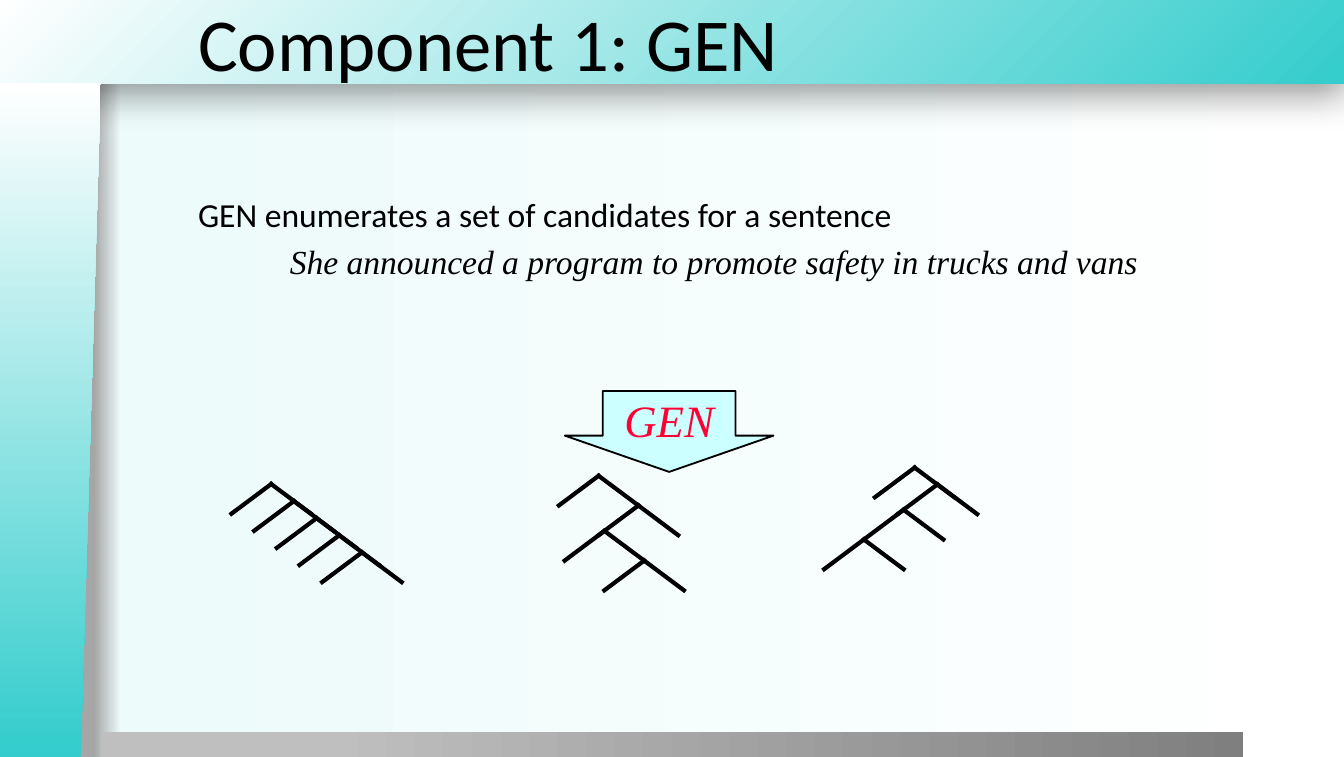
from pptx import Presentation
from pptx import util as u
from pptx.dml.color import RGBColor
from pptx.enum import shapes, text
from pptx.oxml import parse_xml
from pptx.oxml.ns import nsdecls, qn

Pt = u.Pt
color = RGBColor.from_string


def set_gradient(parent, stops, direction='<a:lin ang="0" scaled="0"/>'):
    stop_xml = "".join(
        f'<a:gs pos="{position * 1000}"><a:srgbClr val="{value}"/></a:gs>'
        for position, value in stops
    )
    gradient = parse_xml(
        f'<a:gradFill {nsdecls("a")} rotWithShape="1"><a:gsLst>{stop_xml}</a:gsLst>{direction}</a:gradFill>'
    )
    parent.replace(parent.find(qn("a:solidFill")), gradient)


def add_run(paragraph, wording, size, font, value, italic=False):
    run = paragraph.add_run()
    run.text = wording
    run.font.size = Pt(size)
    run.font.name = font
    run.font.italic = italic
    run.font.color.rgb = color(value)


presentation = Presentation()
presentation.slide_width = Pt(720)
presentation.slide_height = Pt(405.36)
slide = presentation.slides.add_slide(presentation.slide_layouts[6])

slide.background.fill.solid()
set_gradient(
    slide.element.find(".//" + qn("p:bgPr")),
    [(7, "A6A6A6"), (9, "EDFBFB"), (100, "FFFFFF")],
)

linear = '<a:lin ang="0" scaled="0"/>'
corner = '<a:path path="circle"><a:fillToRect l="100000" t="100000"/></a:path>'
panels = []
for preset, left, top, width, height, stops, direction in [
    (shapes.MSO_SHAPE.RECTANGLE, -0.5, 0, 720.5, 44.7, [(0, "34CCCC"), (100, "FFFFFF")], corner),
    (shapes.MSO_SHAPE.RECTANGLE, 54, 392, 612, 14, [(20, "BFBFBF"), (100, "7F7F7F")], linear),
    (shapes.MSO_SHAPE.FLOWCHART_MANUAL_INPUT, -153.7, 198.2, 361.4, 54,
     [(1, "34CCCC"), (100, "FFFFFF")], linear),
]:
    panel = slide.shapes.add_shape(preset, Pt(left), Pt(top), Pt(width), Pt(height))
    panel.shadow.inherit = False
    panel.line.fill.background()
    panel.fill.solid()
    set_gradient(panel.element.spPr, stops, direction)
    panels.append(panel)

header, footer, sidebar = panels
sidebar.rotation = 270
sidebar.element.spPr.find(qn("a:xfrm")).set("flipV", "1")
header.element.spPr.find(qn("a:effectLst")).append(parse_xml(
    f'<a:outerShdw {nsdecls("a")} blurRad="{Pt(20)}" dist="{Pt(6)}" dir="5400000" rotWithShape="0">'
    '<a:srgbClr val="000000"><a:alpha val="40000"/></a:srgbClr></a:outerShdw>'
))

title = slide.shapes.add_textbox(Pt(99), Pt(0), Pt(621), Pt(44.7))
title.text_frame.word_wrap = True
title.text_frame.vertical_anchor = text.MSO_ANCHOR.MIDDLE
add_run(title.text_frame.paragraphs[0], "Component 1: GEN", 40, "Calibri", "000000")

body = slide.shapes.add_textbox(Pt(99), Pt(100.4), Pt(567), Pt(136))
body.text_frame.word_wrap = True
statement = body.text_frame.paragraphs[0]
example = body.text_frame.add_paragraph()
example.alignment = text.PP_ALIGN.CENTER
for paragraph in (statement, example):
    paragraph.space_before = Pt(3.6)
    properties = paragraph._p.get_or_add_pPr()
    properties.set("marL", str(Pt(21)))
    properties.set("indent", str(Pt(-21)))
add_run(statement, "GEN enumerates a set of candidates for a sentence", 18, "Calibri", "000000")
add_run(example, "She announced a program to promote safety in trucks and vans", 18,
        "Times New Roman", "000000", True)

branch_width, branch_height = 21.3, 15.9
trees = [
    [(145.3 + 12.15 * level, 259.2 + 9.15 * level) for level in range(5)],
    [(320.7, 254.8), (342, 270.7), (323.8, 284.3), (345.1, 300.2)],
    [(490, 250.4), (502.2, 259.4), (484.1, 273), (462.8, 288.9)],
]
for nodes in trees:
    tree = slide.shapes.add_group_shape()
    for x, y in nodes:
        for side in (-1, 1):
            branch = tree.shapes.add_connector(
                shapes.MSO_CONNECTOR.STRAIGHT,
                Pt(x + side * branch_width), Pt(y + branch_height), Pt(x), Pt(y),
            )
            branch.line.color.rgb = color("000000")
            branch.line.width = Pt(2.25)
            branch.element.spPr.find(qn("a:ln")).set("cap", "sq")
            branch.element.spPr.append(parse_xml(f'<a:effectLst {nsdecls("a")}/>'))

arrow = slide.shapes.add_shape(shapes.MSO_SHAPE.DOWN_ARROW, Pt(302.6), Pt(209.4), Pt(111.8), Pt(43.3))
arrow.adjustments[0] = 0.636
arrow.adjustments[1] = 0.448
arrow.shadow.inherit = False
arrow.fill.solid()
arrow.fill.fore_color.rgb = color("CCFFFF")
arrow.line.color.rgb = color("000000")
arrow.line.width = Pt(1)
arrow.text_frame.word_wrap = False
arrow.text_frame.vertical_anchor = text.MSO_ANCHOR.MIDDLE
label = arrow.text_frame.paragraphs[0]
label.alignment = text.PP_ALIGN.CENTER
add_run(label, "GEN", 24, "Times New Roman", "FF0033", True)

presentation.save("out.pptx")
